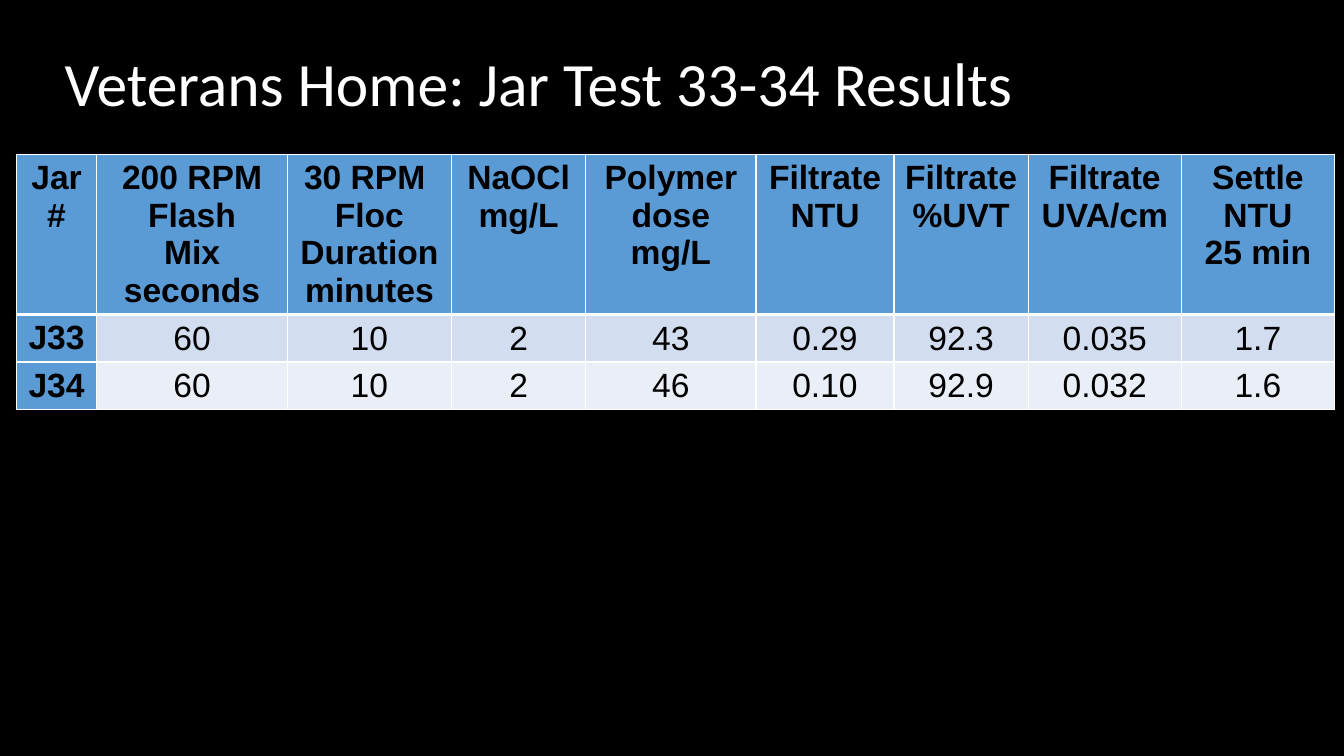
from pptx import Presentation
from pptx.dml.color import RGBColor
from pptx.enum.text import MSO_ANCHOR, MSO_AUTO_SIZE, PP_ALIGN
from pptx.oxml import parse_xml
from pptx.oxml.ns import nsdecls
from pptx.util import Pt

COLORS = {
    "background": "000000",
    "title": "FFFFFF",
    "text": "000000",
    "border": "FFFFFF",
    "heading": "5B9BD5",
    "odd": "D2DEEF",
    "even": "EAEFF7",
}
HEADINGS = [
    "Jar\n#",
    "200 RPM\nFlash\nMix\nseconds",
    "30 RPM \nFloc\nDuration\nminutes",
    "NaOCl\nmg/L",
    "Polymer dose\nmg/L",
    "Filtrate\nNTU",
    "Filtrate\n%UVT",
    "Filtrate\nUVA/cm",
    "Settle\nNTU\n25 min",
]
JARS = [
    ["J33", "60", "10", "2", "43", "0.29", "92.3", "0.035", "1.7"],
    ["J34", "60", "10", "2", "46", "0.10", "92.9", "0.032", "1.6"],
]
COLUMN_WIDTHS = [57.6, 136, 117.4, 95.8, 121.7, 98.6, 95.8, 109.4, 109.4]
ROW_HEIGHTS = [114.4, 34, 34]


def color(name):
    return RGBColor.from_string(COLORS[name])


def write_text(frame, text, *, font, size, fill, bold=False,
               align=PP_ALIGN.LEFT, spacing=None):
    """Write one paragraph for each line of text."""
    frame.text = text
    for paragraph in frame.paragraphs:
        paragraph.alignment = align
        paragraph.line_spacing = spacing
        for run in paragraph.runs:
            run.font.name = font
            run.font.size = Pt(size)
            run.font.bold = bold
            run.font.color.rgb = color(fill)


def add_borders(cell, top, bottom):
    """Line all four sides of a cell; widths are in points."""
    properties = cell._tc.get_or_add_tcPr()
    for side, width in (("L", 1), ("R", 1), ("T", top), ("B", bottom)):
        properties.append(parse_xml(
            f'<a:ln{side} {nsdecls("a")} w="{Pt(width)}"><a:solidFill>'
            f'<a:srgbClr val="{COLORS["border"]}"/></a:solidFill></a:ln{side}>'))


def add_title(slide, left, top, width, height):
    title = slide.shapes.title
    title.left, title.top = Pt(left), Pt(top)
    title.width, title.height = Pt(width), Pt(height)
    frame = title.text_frame
    frame.auto_size = MSO_AUTO_SIZE.NONE
    frame.vertical_anchor = MSO_ANCHOR.MIDDLE
    write_text(frame, "Veterans Home: Jar Test 33-34 Results",
               font="Calibri", size=44, fill="title", spacing=0.9)


def add_results_table(slide, left, top):
    rows = [HEADINGS, *JARS]
    table = slide.shapes.add_table(
        len(rows), len(HEADINGS), Pt(left), Pt(top),
        Pt(sum(COLUMN_WIDTHS)), Pt(sum(ROW_HEIGHTS))).table
    table.first_col = True
    for column, width in zip(table.columns, COLUMN_WIDTHS):
        column.width = Pt(width)
    for row, height in zip(table.rows, ROW_HEIGHTS):
        row.height = Pt(height)

    for row_index, values in enumerate(rows):
        for column_index, value in enumerate(values):
            cell = table.cell(row_index, column_index)
            is_heading = row_index == 0 or column_index == 0
            add_borders(cell, top=3 if row_index == 1 else 1,
                        bottom=3 if row_index == 0 else 1)
            band = "odd" if row_index % 2 else "even"
            cell.fill.solid()
            cell.fill.fore_color.rgb = color("heading" if is_heading else band)
            if not is_heading:
                cell.vertical_anchor = MSO_ANCHOR.MIDDLE
                cell.margin_left = cell.margin_right = cell.margin_top = Pt(0.7)
                cell.margin_bottom = Pt(0)
            write_text(cell.text_frame, value, font="Arial", size=24,
                       fill="text", bold=is_heading, align=PP_ALIGN.CENTER)


def main():
    presentation = Presentation()
    presentation.slide_width, presentation.slide_height = Pt(960), Pt(540)
    slide = presentation.slides.add_slide(presentation.slide_layouts[5])
    slide.background.fill.solid()
    slide.background.fill.fore_color.rgb = color("background")
    add_title(slide, 39, 9.4, 855.4, 104.4)
    add_results_table(slide, 11.6, 110.2)
    presentation.save("out.pptx")


if __name__ == "__main__":
    main()
